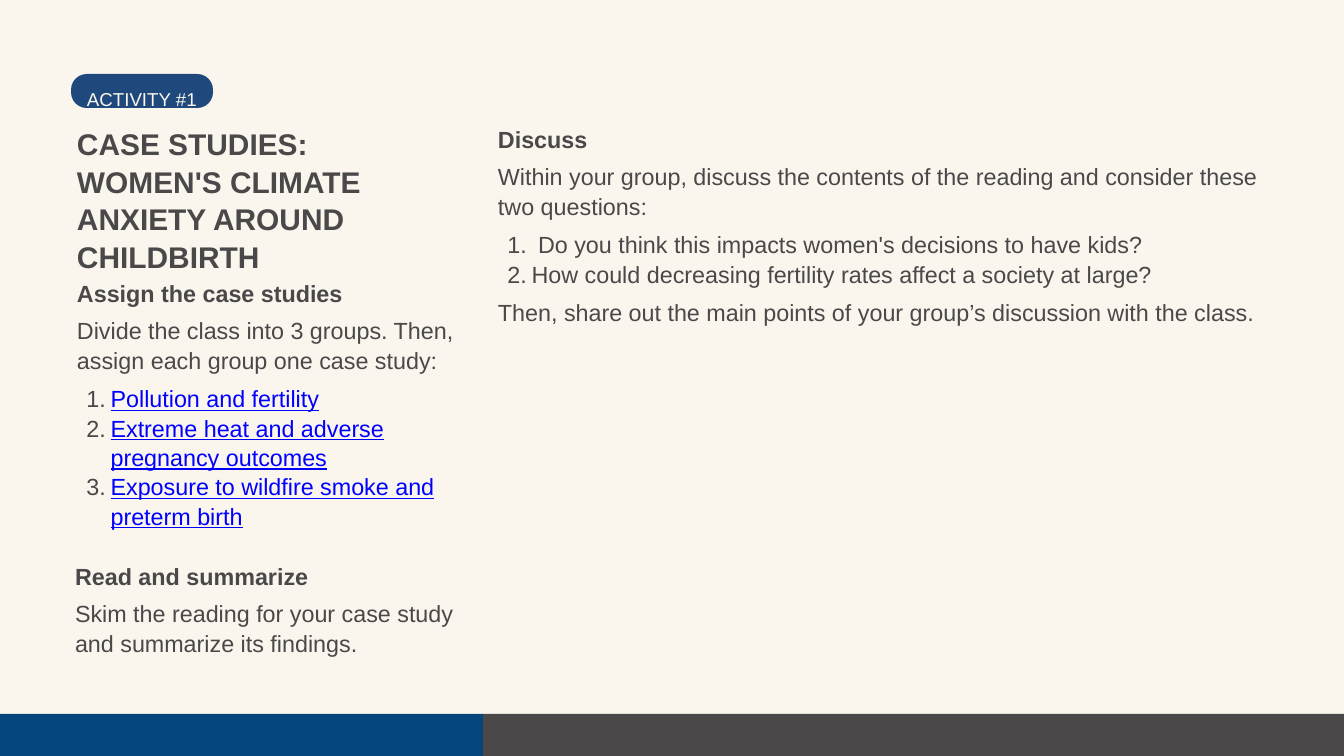
from dataclasses import dataclass

import pptx
import pptx.dml.color
import pptx.enum.shapes
import pptx.enum.text
import pptx.oxml.ns
import pptx.util
from lxml import etree

EMU_PER_PX = 914400 / 67.2
FONT = "Arial"
COLORS = {
    "paper": "FAF6EE",
    "ink": "4A4849",
    "bar": "04467C",
    "badge": "1F497D",
    "link": "0000FF",
}
HEADING_HEIGHT = 28
COLUMN_WIDTH = 380


@dataclass
class Line:
    text: str
    color: str = "ink"
    numbered: bool = False
    underline: bool = False
    space_before: int = 0


@dataclass
class TextBlock:
    left: int
    top: int
    width: int
    height: int
    lines: list[Line]
    size: int = 25
    bold: bool = False
    spacing: float = 1.05


@dataclass
class Panel:
    left: int
    top: int
    width: int
    height: int
    color: str
    corner: float = 0


@dataclass
class Section:
    left: int
    top: int
    width: int
    body_height: int
    heading: str
    body: list[Line]


def px(value: int) -> pptx.util.Emu:
    return pptx.util.Emu(round(value * EMU_PER_PX))


def rgb(name: str) -> pptx.dml.color.RGBColor:
    return pptx.dml.color.RGBColor.from_string(COLORS[name])


def draw_panel(page, panel: Panel) -> None:
    kinds = pptx.enum.shapes.MSO_SHAPE
    kind = kinds.ROUNDED_RECTANGLE if panel.corner else kinds.RECTANGLE
    shape = page.shapes.add_shape(
        kind, px(panel.left), px(panel.top), px(panel.width), px(panel.height))
    if panel.corner:
        shape.adjustments[0] = panel.corner
    shape.shadow.inherit = False
    shape.fill.solid()
    shape.fill.fore_color.rgb = rgb(panel.color)
    shape.line.fill.background()


def add_number(para) -> None:
    para.level = 1
    props = para._p.get_or_add_pPr()
    props.set("marL", str(pptx.util.Inches(0.5)))
    props.set("indent", str(pptx.util.Inches(-0.36)))
    qn = pptx.oxml.ns.qn
    color = etree.SubElement(props, qn("a:buClr"))
    etree.SubElement(color, qn("a:srgbClr"), val=COLORS["ink"])
    etree.SubElement(props, qn("a:buAutoNum"), type="arabicPeriod")


def draw_text(page, block: TextBlock) -> None:
    box = page.shapes.add_textbox(
        px(block.left), px(block.top), px(block.width), px(block.height))
    frame = box.text_frame
    frame.word_wrap = True
    frame.auto_size = pptx.enum.text.MSO_AUTO_SIZE.SHAPE_TO_FIT_TEXT
    frame.margin_left = frame.margin_right = 0
    frame.margin_top = frame.margin_bottom = 0
    frame.text = "\n".join(line.text for line in block.lines)
    for para, line in zip(frame.paragraphs, block.lines):
        if line.numbered:
            add_number(para)
        para.line_spacing = block.spacing
        if line.space_before:
            para.space_before = pptx.util.Pt(line.space_before)
        for span in para.runs:
            span.font.name = FONT
            span.font.size = pptx.util.Pt(block.size)
            span.font.bold = block.bold
            span.font.color.rgb = rgb(line.color)
            if line.underline:
                span.font.underline = True


def draw_section(page, section: Section) -> None:
    draw_text(page, TextBlock(section.left, section.top, section.width,
                              HEADING_HEIGHT, [Line(section.heading)], bold=True))
    draw_text(page, TextBlock(section.left, section.top + 37, section.width,
                              section.body_height, section.body))


def numbered(texts: list[str], color: str = "ink", underline: bool = False) -> list[Line]:
    return [Line(text, color, True, underline, 0 if index else 10)
            for index, text in enumerate(texts)]


FOOTER = [
    Panel(483, 714, 952, 42, "ink"),
    Panel(-40, 714, 523, 42, "bar"),
]
BADGE = Panel(71, 74, 142, 34, "badge", 0.46)
BADGE_TEXT = TextBlock(87, 79, 627, 23, [Line("ACTIVITY #1", "paper")],
                       size=20, spacing=1.4)
TITLE = TextBlock(
    77, 124, 312, 144,
    [Line("CASE STUDIES: WOMEN'S CLIMATE ANXIETY AROUND CHILDBIRTH")],
    size=32, bold=True)
SECTIONS = [
    Section(77, 278, COLUMN_WIDTH, 208, "Assign the case studies", [
        Line("Divide the class into 3 groups. Then, assign each group one case study:"),
        *numbered([
            "Pollution and fertility",
            "Extreme heat and adverse pregnancy outcomes",
            "Exposure to wildfire smoke and preterm birth",
        ], "link", True),
    ]),
    Section(75, 561, COLUMN_WIDTH, 56, "Read and summarize", [
        Line("Skim the reading for your case study and summarize its findings."),
    ]),
    Section(498, 124, 767, 161, "Discuss", [
        Line("Within your group, discuss the contents of the reading "
             "and consider these two questions:"),
        *numbered([
            " Do you think this impacts women's decisions to have kids?",
            "How could decreasing fertility rates affect a society at large?",
        ]),
        Line("Then, share out the main points of your group’s discussion "
             "with the class.", space_before=10),
    ]),
]


def main() -> None:
    deck = pptx.Presentation()
    deck.slide_width, deck.slide_height = px(1344), px(756)
    page = deck.slides.add_slide(deck.slide_layouts[6])
    page.background.fill.solid()
    page.background.fill.fore_color.rgb = rgb("paper")

    # Footer bars
    for bar in FOOTER:
        draw_panel(page, bar)

    # Title and sections
    draw_text(page, TITLE)
    for section in SECTIONS:
        draw_section(page, section)

    # Activity badge
    draw_panel(page, BADGE)
    draw_text(page, BADGE_TEXT)

    deck.save("out.pptx")


if __name__ == "__main__":
    main()
